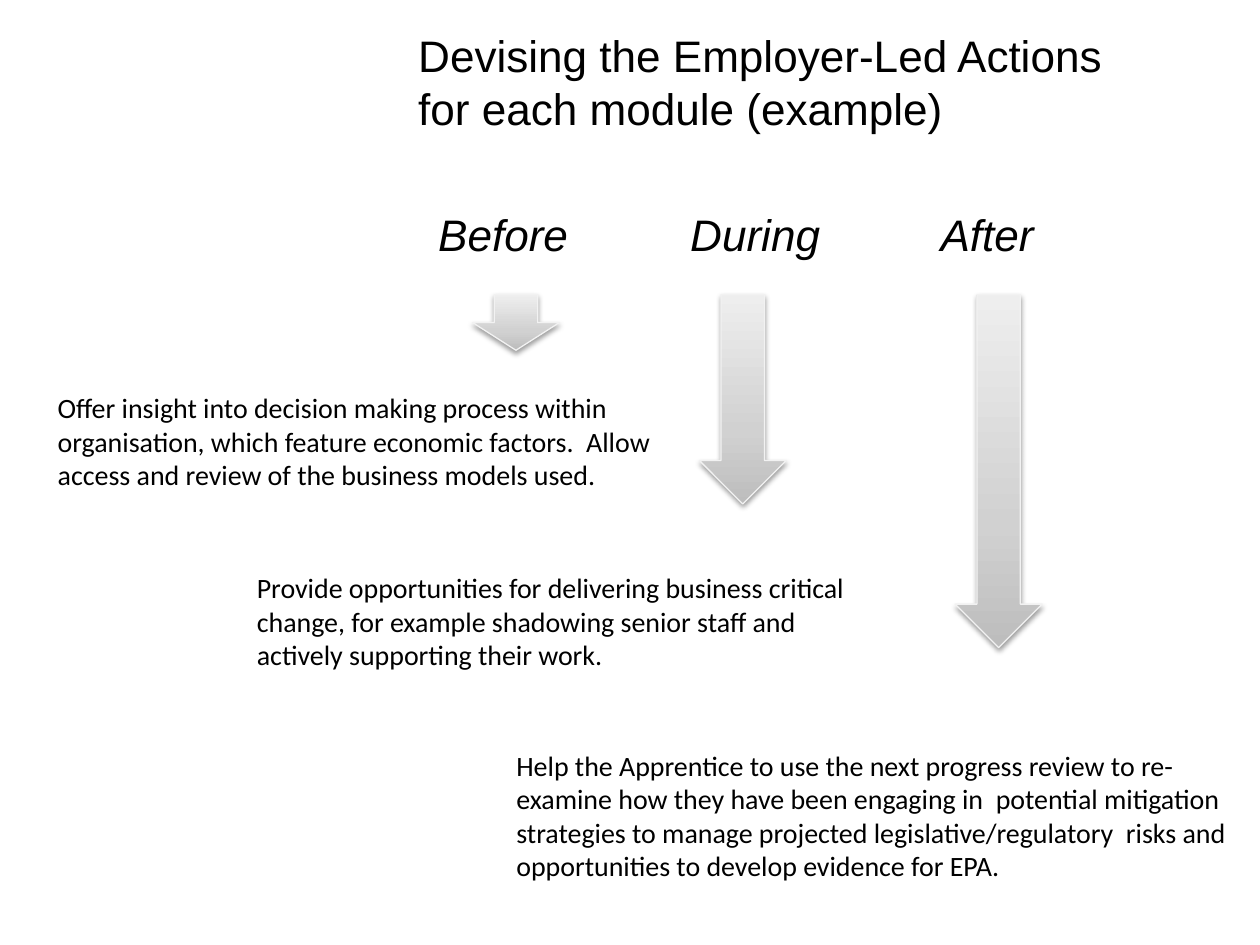
from copy import deepcopy

from lxml import etree
from pptx import Presentation
from pptx.dml.color import RGBColor
from pptx.enum.shapes import MSO_SHAPE
from pptx.enum.text import MSO_ANCHOR, MSO_AUTO_SIZE, PP_ALIGN
from pptx.oxml import parse_xml
from pptx.oxml.ns import nsdecls, qn
from pptx.util import Pt

DOWN_ARROW = MSO_SHAPE.DOWN_ARROW
MIDDLE = MSO_ANCHOR.MIDDLE
NO_AUTOFIT = MSO_AUTO_SIZE.NONE
GROW = MSO_AUTO_SIZE.SHAPE_TO_FIT_TEXT
LEFT = PP_ALIGN.LEFT

COLORS = {
    "text": "000000",
    "arrow_dark": "BDBDBD",
    "arrow_mid": "D1D1D1",
    "arrow_light": "EEEEEE",
    "outline": "F2F2F2",
}
ARROW_STOPS = [(0, "arrow_dark"), (0.35, "arrow_mid"), (1, "arrow_light")]
ARROW_TOP, ARROW_WIDTH = 168.5, 49.7
STAGES = ["Before", "During", "After"]
STAGE_TABS = [11.4, 155.4, 298.5]
ARROWS = [(270, 31.7), (399.6, 119.5), (545.8, 201.6)]
ACTIONS = [
    (25.9, 219.6, 360, 65.5,
     "Offer insight into decision making process within organisation, which feature "
     "economic factors.  Allow access and review of the business models used."),
    (139.7, 322.6, 360.7, 65.5,
     "Provide opportunities for delivering business critical change, for example "
     "shadowing senior staff and actively supporting their work."),
    (288, 424, 421.2, 85,
     "Help the Apprentice to use the next progress review to re-examine how they have "
     "been engaging in  potential mitigation strategies to manage projected "
     "legislative/regulatory  risks and opportunities to develop evidence for EPA."),
]


class SlideBuilder:
    """Holds the style and the current slide."""

    title_font, body_font = "Arial", "Calibri"
    title_size, body_size = 25.2, 16

    def __init__(self, slide):
        self.slide = slide

    def color(self, name):
        return RGBColor.from_string(COLORS[name])

    def format_runs(self, paragraph, font_name, size, italic=False):
        for run in paragraph.runs:
            run.font.name = font_name
            run.font.size = Pt(size)
            run.font.italic = italic
            run.font.color.rgb = self.color("text")

    def title(self, left, top, width, height, heading, stages, tabs):
        shape = self.slide.shapes.title
        shape.left, shape.top = Pt(left), Pt(top)
        shape.width, shape.height = Pt(width), Pt(height)
        frame = shape.text_frame
        frame.auto_size = NO_AUTOFIT
        frame.word_wrap = True
        frame.vertical_anchor = MIDDLE
        frame.text = heading
        stage_line = frame.add_paragraph()
        stage_line.text = "".join("\t" + stage for stage in stages)
        tab_list = etree.SubElement(stage_line._p.get_or_add_pPr(), qn("a:tabLst"))
        for position in tabs:
            etree.SubElement(tab_list, qn("a:tab"), pos=str(Pt(position)), algn="l")
        for paragraph in frame.paragraphs:
            paragraph.alignment = LEFT
            paragraph.line_spacing = Pt(30.2)
            self.format_runs(paragraph, self.title_font, self.title_size,
                             italic=paragraph._p is stage_line._p)
        stage_line.space_before = Pt(42)

    def text(self, left, top, width, height, words):
        shape = self.slide.shapes.add_textbox(Pt(left), Pt(top), Pt(width), Pt(height))
        frame = shape.text_frame
        frame.word_wrap = True
        frame.auto_size = GROW
        frame.text = words
        self.format_runs(frame.paragraphs[0], self.body_font, self.body_size)

    def arrow(self, left, top, width, height):
        shape = self.slide.shapes.add_shape(
            DOWN_ARROW, Pt(left), Pt(top), Pt(width), Pt(height))
        shape.fill.gradient()
        shape.fill.gradient_angle = 90
        properties = shape._element.spPr
        stop_list = properties.find(qn("a:gradFill")).find(qn("a:gsLst"))
        stop_list.append(deepcopy(stop_list[-1]))
        for stop, (position, name) in zip(shape.fill.gradient_stops, ARROW_STOPS):
            stop.position = position
            stop.color.rgb = self.color(name)
        shape.line.color.rgb = self.color("outline")
        shape.line.width = Pt(0.75)
        properties.append(parse_xml(
            f'<a:effectLst {nsdecls("a")}>'
            f'<a:outerShdw blurRad="{Pt(3.1)}" dist="{Pt(1.6)}" dir="5400000" rotWithShape="0">'
            '<a:srgbClr val="000000"><a:alpha val="38000"/></a:srgbClr>'
            '</a:outerShdw></a:effectLst>'))


def main():
    presentation = Presentation()
    presentation.slide_width, presentation.slide_height = Pt(720), Pt(540)
    slide = presentation.slides.add_slide(presentation.slide_layouts[5])
    builder = SlideBuilder(slide)
    builder.title(231.8, 37.4, 535.7, 90,
                  "Devising the Employer-Led Actions \vfor each module (example)",
                  STAGES, STAGE_TABS)
    for action in ACTIONS:
        builder.text(*action)
    for left, height in ARROWS:
        builder.arrow(left, ARROW_TOP, ARROW_WIDTH, height)
    presentation.save("out.pptx")


if __name__ == "__main__":
    main()
